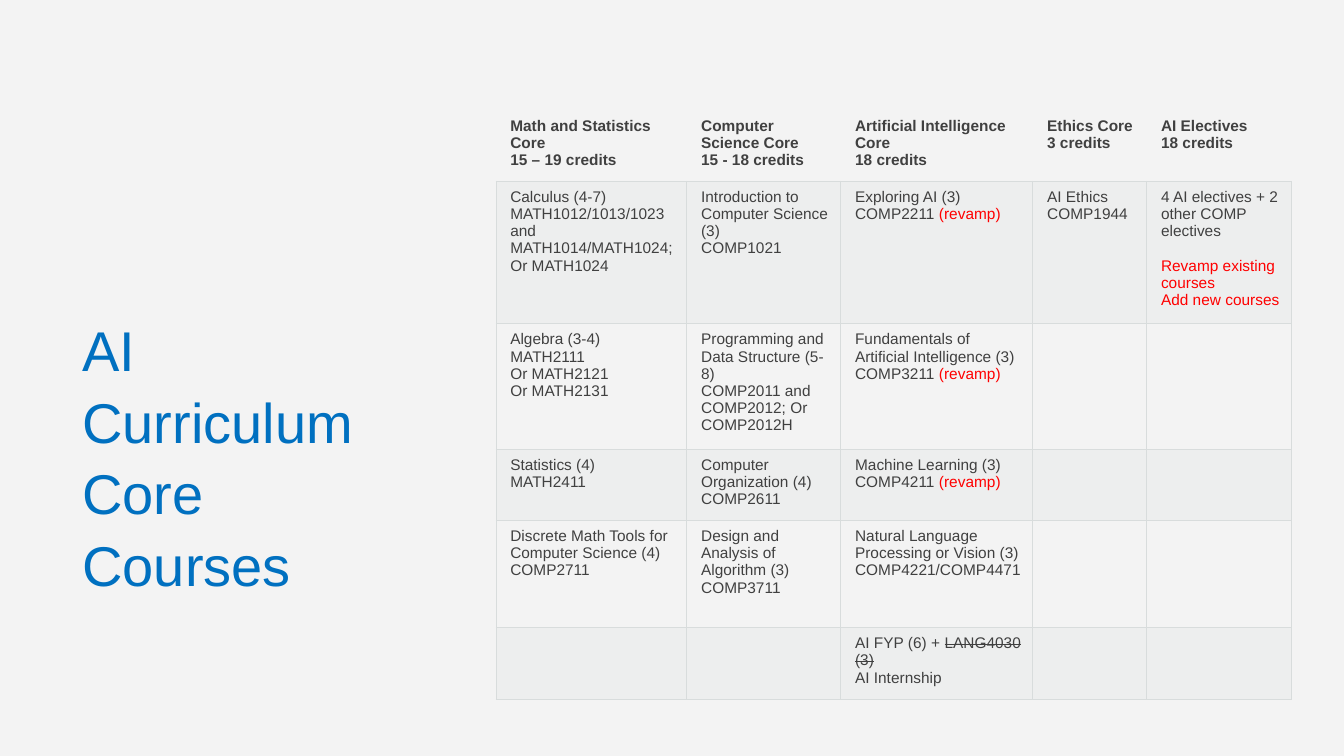
from itertools import product

from lxml.etree import SubElement
from pptx import Presentation
from pptx.dml.color import RGBColor
from pptx.enum.text import MSO_ANCHOR
from pptx.oxml.ns import qn
from pptx.util import Cm, Pt

COLORS = {"back": "F3F3F3", "title": "0070C0", "text": "404040",
          "change": "FF0000", "grid": "D8DCDC", "band": "D8DEDC"}
FONT = "Arial"
NO_STYLE = "{2D5ABB26-0587-4C30-8999-92F81FD0307C}"

TITLE = "AI Curriculum Core Courses"
HEADERS = [
    ["Math and Statistics Core", "15 – 19 credits"],
    ["Computer Science Core", "15 - 18 credits"],
    ["Artificial Intelligence Core", "18 credits"],
    ["Ethics Core", "3 credits"],
    ["AI Electives", "18 credits"],
]
REVAMP = ("(revamp)", "change")
# A cell is a list of paragraphs; a paragraph is a string or a list of (text, style) runs.
COURSES = [
    [["Calculus (4-7)", "MATH1012/1013/1023 and", "MATH1014/MATH1024;", "Or MATH1024"],
     ["Introduction to Computer Science (3)", "COMP1021"],
     ["Exploring AI (3)", [("COMP2211 ", "text"), REVAMP]],
     ["AI Ethics", "COMP1944"],
     ["4 AI electives + 2 other COMP electives",
      [("Revamp existing courses", "change")], [("Add new courses", "change")]]],
    [["Algebra (3-4)", "MATH2111", "Or MATH2121", "Or MATH2131"],
     ["Programming and Data Structure (5-8)", "COMP2011 and COMP2012; Or COMP2012H"],
     ["Fundamentals of Artificial Intelligence (3)", [("COMP3211 ", "text"), REVAMP]],
     [], []],
    [["Statistics (4)", "MATH2411"],
     ["Computer Organization (4)", "COMP2611"],
     ["Machine Learning (3)", [("COMP4211 ", "text"), REVAMP]],
     [], []],
    [["Discrete Math Tools for Computer Science (4)", "COMP2711"],
     ["Design and Analysis of Algorithm (3)", "COMP3711"],
     ["Natural Language Processing or Vision (3)", "COMP4221/COMP4471"],
     [], []],
    [[], [],
     [[("AI FYP (6) + ", "text"), ("LANG4030 (3)", "dropped")], "AI Internship"],
     [], []],
]
GRID = [HEADERS] + COURSES
COL_WIDTHS = [4.81, 3.88, 4.84, 2.87, 3.65]
ROW_HEIGHTS = [1.8, 3.4, 2.95, 1.8, 2.7, 1.8]
TABLE_LEFT, TABLE_TOP = 12.5, 2.77
MARGINS = {"margin_left": Cm(0.36), "margin_right": Cm(0.18),
           "margin_top": Cm(0.18), "margin_bottom": Cm(0.18)}
ELECTIVES_CELL, ELECTIVES_GAP = (1, 4), Pt(12.3)


def rgb(name):
    return RGBColor.from_string(COLORS[name])


def set_format(font, color, **values):
    for key, value in {"name": FONT, **values}.items():
        setattr(font, key, value)
    font.color.rgb = rgb(color)


def set_borders(cell, visible):
    """Draw the named sides (L, R, T, B) and leave the others empty."""
    tcPr = cell._tc.get_or_add_tcPr()
    for side in "LRTB":
        ln = SubElement(tcPr, qn(f"a:ln{side}"), w=str(Pt(0.75)))
        if side in visible:
            fill = SubElement(ln, qn("a:solidFill"))
            SubElement(fill, qn("a:srgbClr"), val=COLORS["grid"])
        else:
            SubElement(ln, qn("a:noFill"))


def fill_cell(cell, banded):
    if not banded:
        cell.fill.background()
        return
    cell.fill.solid()
    cell.fill.fore_color.rgb = rgb("band")
    clr = cell._tc.tcPr.find(".//" + qn("a:srgbClr") + f"[@val='{COLORS['band']}']")
    SubElement(clr, qn("a:alpha"), val="20000")


def write_cell(cell, paragraphs, bold):
    tf = cell.text_frame
    for i, runs in enumerate(paragraphs):
        p = tf.paragraphs[0] if i == 0 else tf.add_paragraph()
        if isinstance(runs, str):
            runs = [(runs, "text")]
        for text, style in runs:
            r = p.add_run()
            r.text = text
            color = "change" if style == "change" else "text"
            set_format(r.font, color, size=Pt(11), bold=bold)
            if style == "dropped":
                r._r.get_or_add_rPr().set("strike", "sngStrike")


def add_title(s):
    tf = s.shapes.add_textbox(Cm(1.83), Cm(7.7), Cm(8), Cm(8.53)).text_frame
    tf.word_wrap = True
    tf.vertical_anchor = MSO_ANCHOR.TOP
    p = tf.paragraphs[0]
    p.line_spacing = 1.07
    r = p.add_run()
    r.text = TITLE
    set_format(r.font, "title", size=Pt(40))


def add_courses(s):
    frame = s.shapes.add_table(len(GRID), len(COL_WIDTHS), Cm(TABLE_LEFT), Cm(TABLE_TOP),
                               Cm(sum(COL_WIDTHS)), Cm(sum(ROW_HEIGHTS)))
    table = frame.table
    table.first_row = table.horz_banding = False
    table._tbl.tblPr.find(qn("a:tableStyleId")).text = NO_STYLE
    for col, width in zip(table.columns, COL_WIDTHS):
        col.width = Cm(width)
    for row, height in zip(table.rows, ROW_HEIGHTS):
        row.height = Cm(height)
    for i, j in product(range(len(GRID)), range(len(COL_WIDTHS))):
        cell = table.cell(i, j)
        for key, value in MARGINS.items():
            setattr(cell, key, value)
        set_borders(cell, "LRTB" if i else "B")
        fill_cell(cell, i % 2 == 1)
        write_cell(cell, GRID[i][j], bold=i == 0)
    table.cell(*ELECTIVES_CELL).text_frame.paragraphs[1].space_before = ELECTIVES_GAP


def main():
    prs = Presentation()
    prs.slide_width, prs.slide_height = Cm(33.87), Cm(19.05)
    s = prs.slides.add_slide(prs.slide_layouts[6])
    s.background.fill.solid()
    s.background.fill.fore_color.rgb = rgb("back")
    add_title(s)
    add_courses(s)
    prs.save("out.pptx")


if __name__ == "__main__":
    main()
